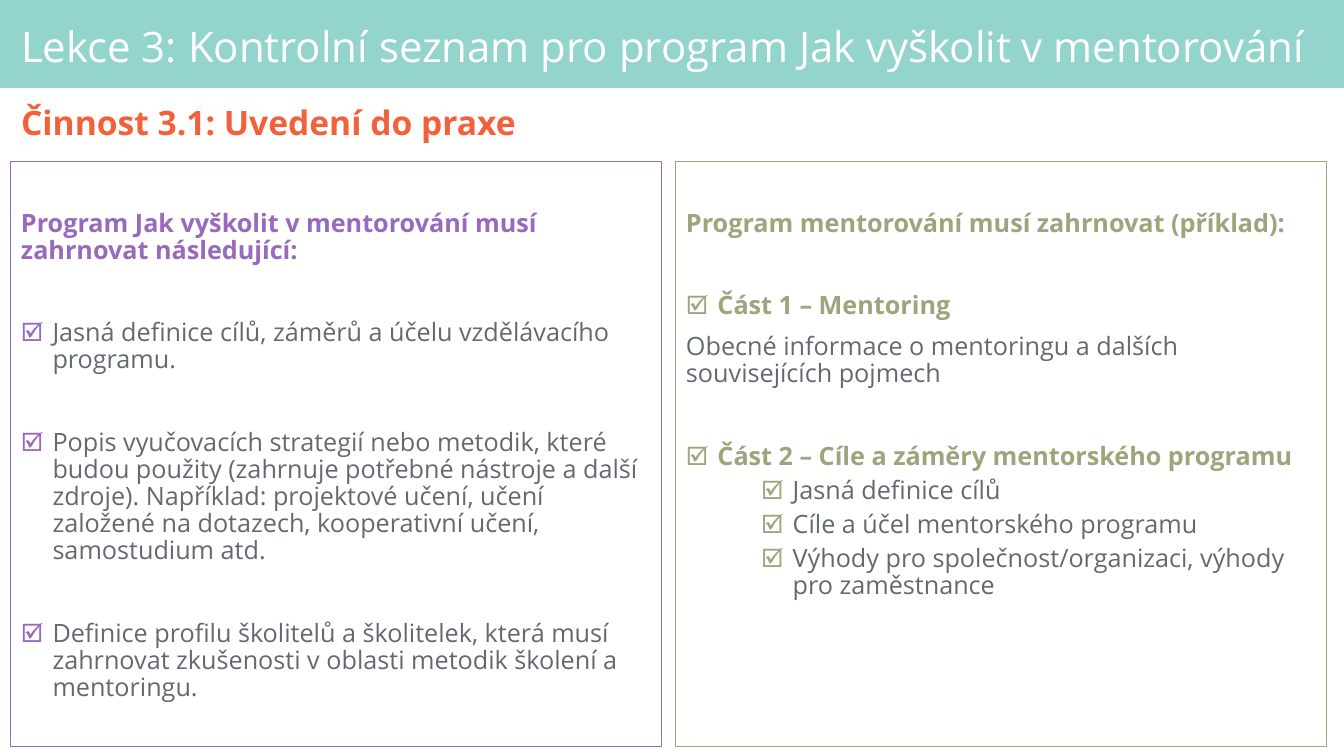
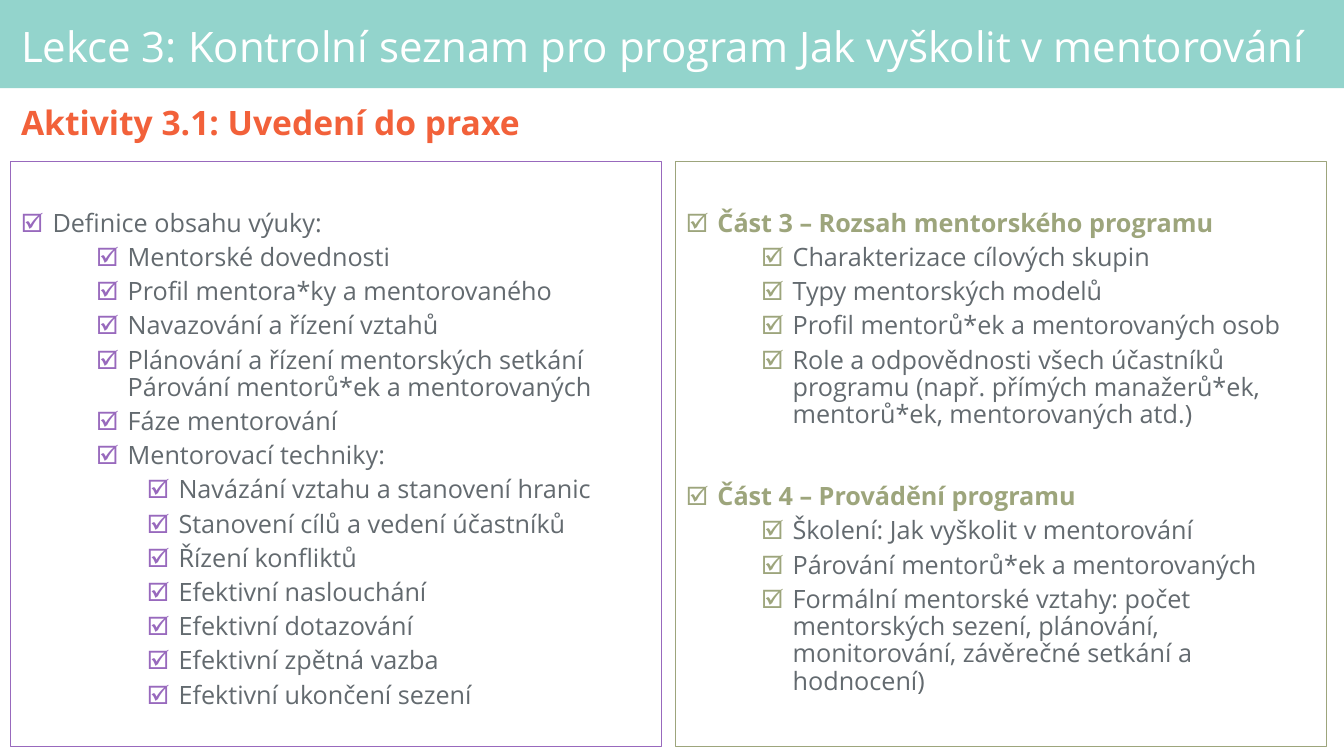
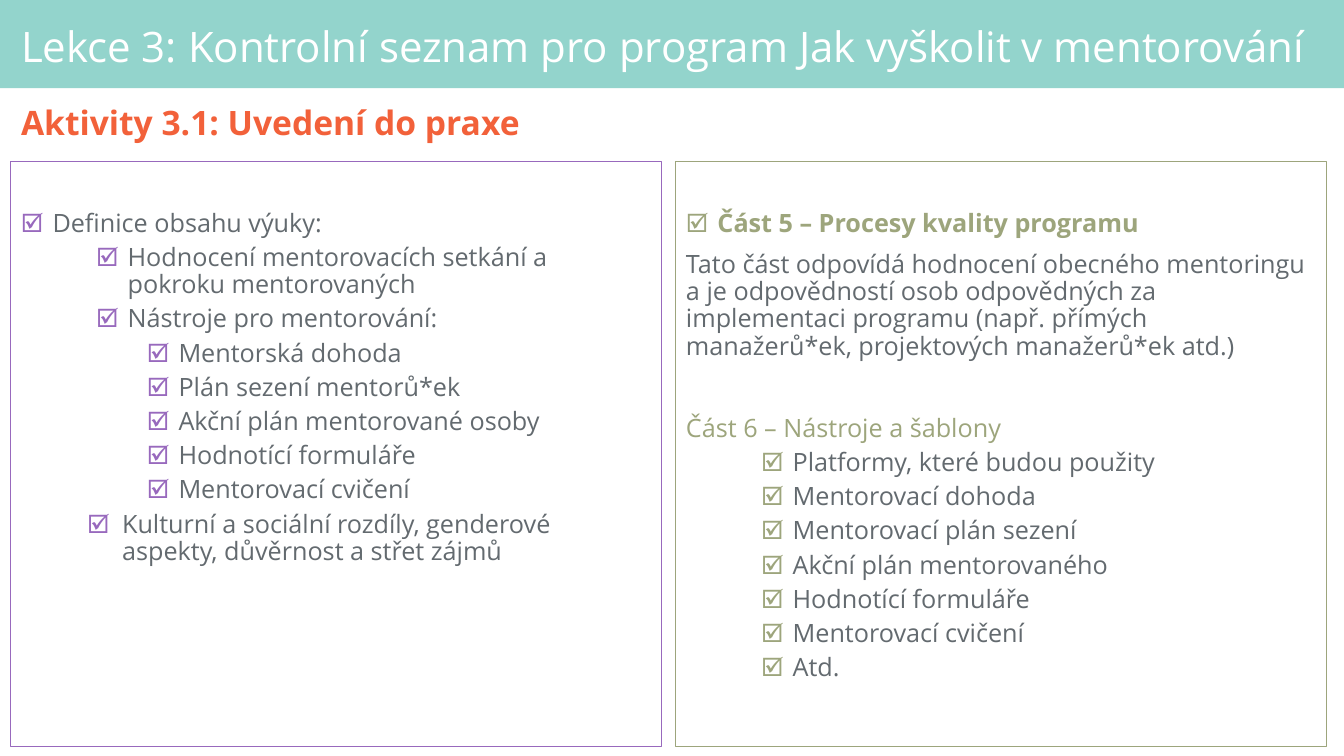
from dataclasses import dataclass

from lxml import etree
from pptx import Presentation
from pptx.dml.color import RGBColor
from pptx.enum import shapes, text
from pptx.oxml import ns
from pptx.util import Pt

MINT = RGBColor(0x93, 0xD4, 0xCC)
PURPLE = RGBColor(0x98, 0x69, 0xBD)
OLIVE = RGBColor(0x9D, 0xA5, 0x7C)
ORANGE = RGBColor(0xF2, 0x61, 0x3A)
GRAY = RGBColor(0x63, 0x6A, 0x6F)
WHITE = RGBColor(0xFF, 0xFF, 0xFF)

FONT = "Open Sans"
CHECK = "🗹"
WIDTH, HEIGHT = 960, 540
MARGIN = 7.5
GROUP_GAP = 39.3
PANEL_WIDTH, PANEL_GAP = 465, 10
LESSON = "Lekce 3: Kontrolní seznam pro program Jak vyškolit v mentorování"


@dataclass
class Style:
    margin: float = 0
    hang: float = 0
    level: int = 0
    before: float = 10
    bold: bool = False
    accent: bool = False


INTRO = Style(bold=True, accent=True)
PLAIN = Style()
LABEL = Style(accent=True)
PART = Style(22.5, 22.5, bold=True, accent=True)
ITEM = Style(22.5, 22.5)
SUB = Style(76.2, 22.5, 1, 5)
DEEP = Style(112.5, 22.5, 2, 5)
WIDE = Style(72.2, 25, 1, 5)

SLIDES = [
    ("Činnost 3.1: Uvedení do praxe",
     [[(INTRO, "Program Jak vyškolit v mentorování musí zahrnovat následující:")],
      [(ITEM, "Jasná definice cílů, záměrů a účelu vzdělávacího programu.")],
      [(ITEM, "Popis vyučovacích strategií nebo metodik, které budou použity "
              "(zahrnuje potřebné nástroje a další zdroje). Například: projektové učení, "
              "učení založené na dotazech, kooperativní učení, samostudium atd.")],
      [(ITEM, "Definice profilu školitelů a školitelek, která musí zahrnovat "
              "zkušenosti v oblasti metodik školení a mentoringu.")]],
     [[(INTRO, "Program mentorování musí zahrnovat (příklad):")],
      [(PART, "Část 1 – Mentoring"),
       (PLAIN, "Obecné informace o mentoringu a dalších souvisejících pojmech")],
      [(PART, "Část 2 – Cíle a záměry mentorského programu"),
       (SUB, "Jasná definice cílů"),
       (SUB, "Cíle a účel mentorského programu"),
       (SUB, "Výhody pro společnost/organizaci, výhody pro zaměstnance")]]),
    ("Aktivity 3.1: Uvedení do praxe",
     [[(ITEM, "Definice obsahu výuky:"),
       (SUB, "Mentorské dovednosti"),
       (SUB, "Profil mentora*ky a mentorovaného"),
       (SUB, "Navazování a řízení vztahů"),
       (SUB, "Plánování a řízení mentorských setkání Párování mentorů*ek a mentorovaných"),
       (SUB, "Fáze mentorování"),
       (SUB, "Mentorovací techniky:"),
       (DEEP, "Navázání vztahu a stanovení hranic"),
       (DEEP, "Stanovení cílů a vedení účastníků"),
       (DEEP, "Řízení konfliktů"),
       (DEEP, "Efektivní naslouchání"),
       (DEEP, "Efektivní dotazování"),
       (DEEP, "Efektivní zpětná vazba"),
       (DEEP, "Efektivní ukončení sezení")]],
     [[(PART, "Část 3 – Rozsah mentorského programu"),
       (SUB, "Charakterizace cílových skupin"),
       (SUB, "Typy mentorských modelů"),
       (SUB, "Profil mentorů*ek a mentorovaných osob"),
       (SUB, "Role a odpovědnosti všech účastníků programu (např. přímých "
             "manažerů*ek, mentorů*ek, mentorovaných atd.)")],
      [(PART, "Část 4 – Provádění programu"),
       (SUB, "Školení: Jak vyškolit v mentorování"),
       (SUB, "Párování mentorů*ek a mentorovaných"),
       (SUB, "Formální mentorské vztahy: počet mentorských sezení, plánování, "
             "monitorování, závěrečné setkání a hodnocení)")]]),
    ("Aktivity 3.1: Uvedení do praxe",
     [[(ITEM, "Definice obsahu výuky:"),
       (SUB, "Hodnocení mentorovacích setkání a pokroku mentorovaných"),
       (SUB, "Nástroje pro mentorování:"),
       (DEEP, "Mentorská dohoda"),
       (DEEP, "Plán sezení mentorů*ek"),
       (DEEP, "Akční plán mentorované osoby"),
       (DEEP, "Hodnotící formuláře"),
       (DEEP, "Mentorovací cvičení"),
       (WIDE, "Kulturní a sociální rozdíly, genderové aspekty, důvěrnost a střet zájmů")]],
     [[(PART, "Část 5 – Procesy kvality programu"),
       (PLAIN, "Tato část odpovídá hodnocení obecného mentoringu a je odpovědností "
               "osob odpovědných za implementaci programu (např. přímých "
               "manažerů*ek, projektových manažerů*ek atd.)")],
      [(LABEL, "Část 6 – Nástroje a šablony"),
       (SUB, "Platformy, které budou použity"),
       (SUB, "Mentorovací dohoda"),
       (SUB, "Mentorovací plán sezení"),
       (SUB, "Akční plán mentorovaného"),
       (SUB, "Hodnotící formuláře"),
       (SUB, "Mentorovací cvičení"),
       (SUB, "Atd.")]]),
]


def set_frame(frame, anchor, left, top, right, bottom):
    frame.word_wrap = True
    frame.auto_size = text.MSO_AUTO_SIZE.NONE
    frame.vertical_anchor = anchor
    frame.margin_left, frame.margin_top = Pt(left), Pt(top)
    frame.margin_right, frame.margin_bottom = Pt(right), Pt(bottom)


def write(paragraph, words, size, color, bold=False):
    paragraph.alignment = text.PP_ALIGN.LEFT
    paragraph.line_spacing = 0.9
    run = paragraph.add_run()
    run.text = words
    run.font.name, run.font.size = FONT, Pt(size)
    run.font.bold, run.font.color.rgb = bold, color


def add_check(paragraph, style, color):
    properties = paragraph._p.get_or_add_pPr()
    properties.set("marL", str(Pt(style.margin)))
    properties.set("indent", str(-Pt(style.hang)))
    bullet_color = etree.SubElement(properties, ns.qn("a:buClr"))
    etree.SubElement(bullet_color, ns.qn("a:srgbClr")).set("val", str(color))
    etree.SubElement(properties, ns.qn("a:buFont")).set("typeface", FONT)
    etree.SubElement(properties, ns.qn("a:buChar")).set("char", CHECK)


def add_band(slide, layout):
    band = slide.shapes.add_shape(shapes.MSO_SHAPE.RECTANGLE, 0, 0, Pt(WIDTH), Pt(63))
    band.shadow.inherit = False
    band.fill.solid()
    band.fill.fore_color.rgb = MINT
    band.line.fill.background()
    band.element.nvSpPr.cNvPr.set("id", "20")
    layout.shapes.element.insert(2, band.element)


def add_heading(slide, left, top, width, activity):
    lesson = slide.shapes.title
    lesson.left, lesson.top = Pt(left), Pt(top)
    lesson.width, lesson.height = Pt(width), Pt(56)
    set_frame(lesson.text_frame, text.MSO_ANCHOR.MIDDLE, 7.5, 4, 4, 4)
    write(lesson.text_frame.paragraphs[0], LESSON, 30, WHITE)
    subtitle = slide.shapes.add_textbox(Pt(left), Pt(top + 60.5), Pt(width), Pt(43))
    set_frame(subtitle.text_frame, text.MSO_ANCHOR.MIDDLE, 7.5, 3.5, 7, 3.5)
    write(subtitle.text_frame.paragraphs[0], activity, 24, ORANGE, True)


def add_panel(slide, left, top, width, height, color, groups):
    panel = slide.shapes.add_shape(
        shapes.MSO_SHAPE.RECTANGLE, Pt(left), Pt(top), Pt(width), Pt(height))
    panel.shadow.inherit = False
    panel.fill.background()
    panel.line.color.rgb = color
    panel.line.width = Pt(0.75)
    frame = panel.text_frame
    set_frame(frame, text.MSO_ANCHOR.TOP, 7.5, 34.8, 7.2, 3.5)
    for group_index, group in enumerate(groups):
        for row, (style, words) in enumerate(group):
            first = group_index == row == 0
            paragraph = frame.paragraphs[0] if first else frame.add_paragraph()
            paragraph.level = style.level
            paragraph.space_before = Pt(
                0 if first else style.before if row else GROUP_GAP)
            write(paragraph, words, 18, color if style.accent else GRAY, style.bold)
            if style.hang:
                add_check(paragraph, style, color)


def main():
    deck = Presentation()
    deck.slide_width, deck.slide_height = Pt(WIDTH), Pt(HEIGHT)
    layout = deck.slide_layouts[5]
    for index, (activity, *panels) in enumerate(SLIDES):
        slide = deck.slides.add_slide(layout)
        if index == 0:
            add_band(slide, layout)
        add_heading(slide, MARGIN, 7, WIDTH - 20, activity)
        for column, (color, groups) in enumerate(zip((PURPLE, OLIVE), panels)):
            left = MARGIN + column * (PANEL_WIDTH + PANEL_GAP)
            add_panel(slide, left, 115.5, PANEL_WIDTH, 418, color, groups)
    deck.save("out.pptx")


if __name__ == "__main__":
    main()
